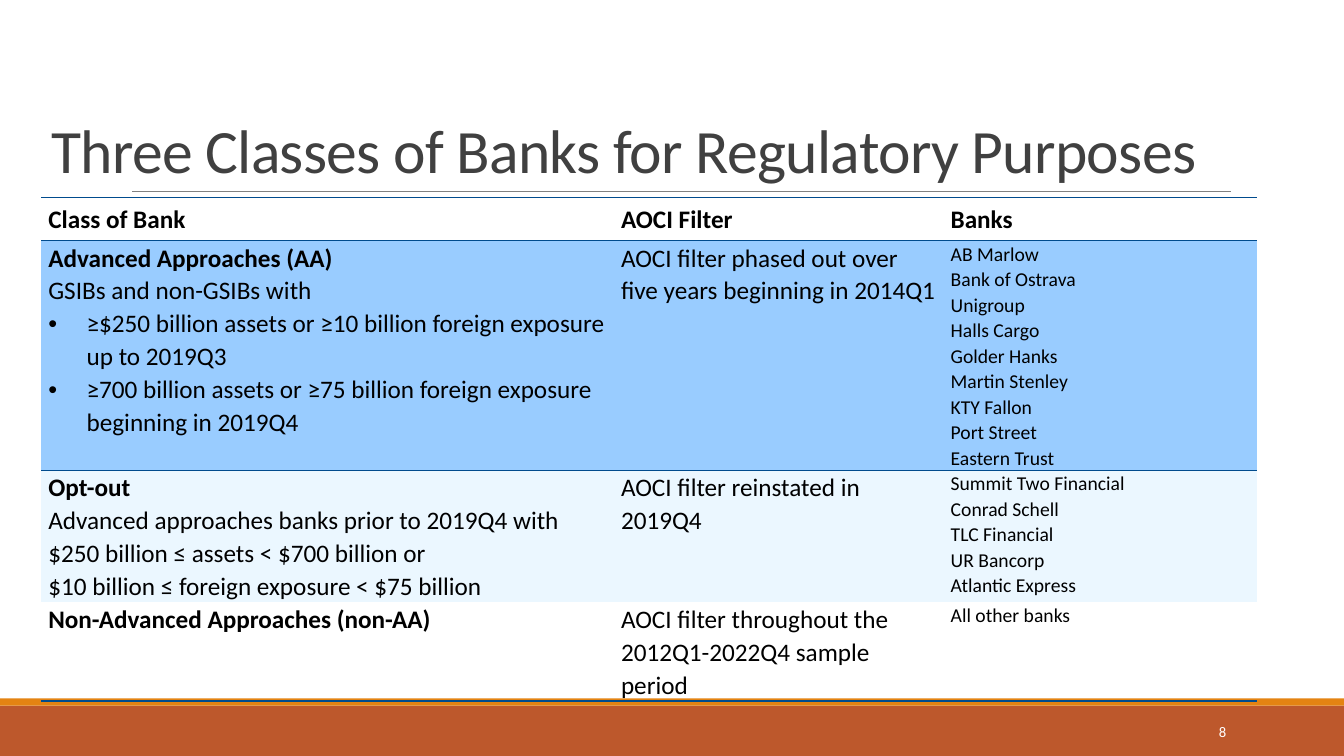
from pptx import Presentation
from pptx.dml.color import RGBColor
from pptx.enum.shapes import MSO_CONNECTOR, MSO_SHAPE
from pptx.enum.text import MSO_ANCHOR, MSO_AUTO_SIZE, PP_ALIGN
from pptx.oxml import parse_xml
from pptx.oxml.ns import nsdecls
from pptx.util import Inches, Pt


def rgb(value):
    return RGBColor.from_string(value)


def add_run(paragraph, text, size, color, bold=False):
    run = paragraph.add_run()
    run.text = text
    run.font.name = "Calibri"
    run.font.size = Pt(size)
    run.font.bold = bold
    run.font.color.rgb = rgb(color)
    return run


deck = Presentation()
deck.slide_width = Inches(13.33)
deck.slide_height = Inches(7.5)
slide = deck.slides.add_slide(deck.slide_layouts[5])

for top, height, color in [(7, 0.5, "BD582C"), (6.93, 0.07, "E48312")]:
    band = slide.shapes.add_shape(
        MSO_SHAPE.RECTANGLE, 0, Inches(top), Inches(13.33), Inches(height))
    band.shadow.inherit = False
    band.fill.solid()
    band.fill.fore_color.rgb = rgb(color)
    band.line.fill.background()

title_rule = slide.shapes.add_connector(
    MSO_CONNECTOR.STRAIGHT, Inches(1.31), Inches(1.9), Inches(12.21), Inches(1.9))
title_rule.line.color.rgb = rgb("808080")
title_rule.line.width = Pt(0.5)
title_rule._element.spPr.append(parse_xml(f"<a:effectLst {nsdecls('a')}/>"))

title = slide.shapes.title
title.left, title.top = Inches(0.41), Inches(0.31)
title.width, title.height = Inches(12.05), Inches(1.59)
title.text_frame.word_wrap = True
title.text_frame.auto_size = MSO_AUTO_SIZE.NONE
title.text_frame.vertical_anchor = MSO_ANCHOR.BOTTOM
heading = title.text_frame.paragraphs[0]
heading.alignment = PP_ALIGN.LEFT
heading.line_spacing = 0.85
heading_run = add_run(
    heading, "Three Classes of Banks for Regulatory Purposes", 44, "404040")
heading_run.font._element.set("spc", "-50")

column_widths = [5.68, 3.27, 3.11]
row_heights = [0.43, 1.94, 1.26, 0.84]
row_fills = [None, "99CCFF", "EBF7FF", None]
row_borders = [["lnT"], ["lnT"], [], ["lnB"]]
bank_classes = [
    [["Class of Bank"], ["AOCI Filter"], ["Banks"]],
    [
        ["Advanced Approaches (AA)",
         "GSIBs and non-GSIBs with",
         "≥$250 billion assets or ≥10 billion foreign exposure up to 2019Q3",
         "≥700 billion assets or ≥75 billion foreign exposure beginning in 2019Q4"],
        ["AOCI filter phased out over five years beginning in 2014Q1"],
        ["AB Marlow", "Bank of Ostrava", "Unigroup", "Halls Cargo", "Golder Hanks",
         "Martin Stenley", "KTY Fallon", "Port Street", "Eastern Trust"],
    ],
    [
        ["Opt-out",
         "Advanced approaches banks prior to 2019Q4 with",
         "$250 billion ≤ assets < $700 billion or",
         "$10 billion ≤ foreign exposure < $75 billion"],
        ["AOCI filter reinstated in 2019Q4"],
        ["Summit Two Financial", "Conrad Schell", "TLC Financial",
         "UR Bancorp", "Atlantic Express"],
    ],
    [
        ["Non-Advanced Approaches (non-AA)"],
        ["AOCI filter throughout the 2012Q1-2022Q4 sample period"],
        ["All other banks"],
    ],
]

classes_table = slide.shapes.add_table(
    4, 3, Inches(0.41), Inches(1.96), Inches(12.05), Inches(4.47)).table
classes_table.first_row = False
classes_table.horz_banding = False
classes_table._tbl.tblPr[0].text = "{2D5ABB26-0587-4C30-8999-92F81FD0307C}"
for column, width in zip(classes_table.columns, column_widths):
    column.width = Inches(width)

for row_index, bank_class in enumerate(bank_classes):
    classes_table.rows[row_index].height = Inches(row_heights[row_index])
    for column_index, lines in enumerate(bank_class):
        cell = classes_table.cell(row_index, column_index)
        cell.margin_left = cell.margin_right = Inches(0.07)
        cell.margin_top = cell.margin_bottom = 0
        cell.vertical_anchor = MSO_ANCHOR.TOP if row_index else MSO_ANCHOR.MIDDLE
        if row_fills[row_index]:
            cell.fill.solid()
            cell.fill.fore_color.rgb = rgb(row_fills[row_index])
        else:
            cell.fill.background()
        for edge in row_borders[row_index]:
            cell._tc.tcPr.insert(0, parse_xml(
                f'<a:{edge} {nsdecls("a")} w="12700"><a:solidFill>'
                f'<a:srgbClr val="004B8D"/></a:solidFill></a:{edge}>'))
        for line_index, line in enumerate(lines):
            if line_index:
                paragraph = cell.text_frame.add_paragraph()
            else:
                paragraph = cell.text_frame.paragraphs[0]
            paragraph.line_spacing = 1.07
            size = 14 if row_index and column_index == 2 else 18
            bold = row_index == 0 or (column_index == 0 and line_index == 0)
            add_run(paragraph, line, size, "000000", bold)
            if line.startswith("≥"):
                properties = paragraph._p.get_or_add_pPr()
                properties.set("marL", str(Inches(0.38)))
                properties.set("indent", str(Inches(-0.38)))
                properties.append(parse_xml(
                    f'<a:buFont {nsdecls("a")} typeface="Arial"/>'))
                properties.append(parse_xml(
                    f'<a:buChar {nsdecls("a")} char="•"/>'))

page_number = slide.shapes.add_textbox(
    Inches(10.83), Inches(7.06), Inches(1.43), Inches(0.4)).text_frame
page_number.word_wrap = True
page_number.vertical_anchor = MSO_ANCHOR.MIDDLE
page_number.paragraphs[0].alignment = PP_ALIGN.RIGHT
add_run(page_number.paragraphs[0], "8", 10.5, "FFFFFF")

deck.save("out.pptx")
